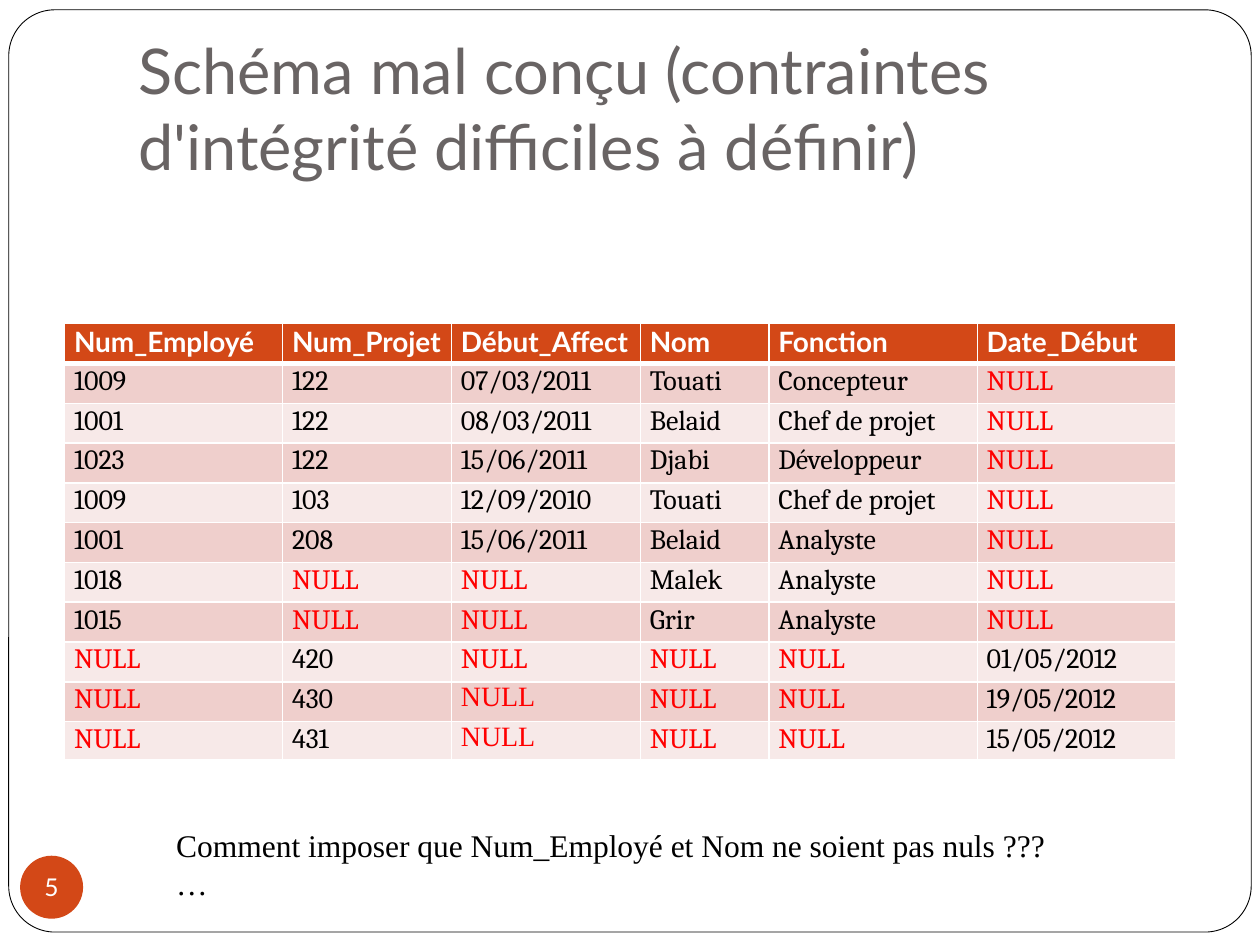
from dataclasses import dataclass

from lxml import etree
from pptx import Presentation
from pptx.dml.color import RGBColor
from pptx.enum.shapes import MSO_SHAPE
from pptx.enum.text import MSO_ANCHOR, PP_ALIGN
from pptx.oxml.ns import qn
from pptx.util import Pt

ROUNDED = MSO_SHAPE.ROUNDED_RECTANGLE
OVAL = MSO_SHAPE.OVAL
TOP, MIDDLE, BOTTOM = MSO_ANCHOR.TOP, MSO_ANCHOR.MIDDLE, MSO_ANCHOR.BOTTOM
LEFT, CENTER = PP_ALIGN.LEFT, PP_ALIGN.CENTER


@dataclass(frozen=True)
class Theme:
    white: str = "FFFFFF"
    black: str = "000000"
    title: str = "696464"
    accent: str = "D34817"
    missing: str = "FF0000"
    bands: tuple = ("EFCFCC", "F7E9E8")
    heading_font: str = "Lato"
    cell_font: str = "Cambria"
    note_font: str = "Times New Roman"
    title_size: int = 36
    note_size: int = 18
    cell_size: int = 16
    number_size: int = 14


class SlideBuilder:
    def __init__(self, slide, theme):
        self.slide = slide
        self.theme = theme

    def set_text(self, frame, lines, font, size, color, align=LEFT, bold=False, spacing=None):
        frame.text = "\n".join(lines)
        for paragraph in frame.paragraphs:
            paragraph.alignment = align
            paragraph.line_spacing = spacing
            paragraph.font.name = font
            paragraph.font.size = Pt(size)
            paragraph.font.bold = bold
            paragraph.font.color.rgb = RGBColor.from_string(color)

    def shape(self, kind, box, fill, line=None):
        shape = self.slide.shapes.add_shape(kind, *map(Pt, box))
        shape.shadow.inherit = False
        shape.fill.solid()
        shape.fill.fore_color.rgb = RGBColor.from_string(fill)
        if line:
            shape.line.color.rgb = RGBColor.from_string(line)
            shape.line.width = Pt(0.5)
        else:
            shape.line.fill.background()
        return shape

    def frame(self, box):
        outline = self.shape(ROUNDED, box, self.theme.white, self.theme.black)
        outline.adjustments[0] = 0.05

    def text(self, box, lines, font, size, color, anchor=TOP, bottom=3.6):
        frame = self.slide.shapes.add_textbox(*map(Pt, box)).text_frame
        frame.word_wrap = True
        frame.vertical_anchor = anchor
        frame.margin_bottom = Pt(bottom)
        self.set_text(frame, lines, font, size, color)

    def page_number(self, box, number):
        theme = self.theme
        frame = self.shape(OVAL, box, theme.accent).text_frame
        frame.margin_left = frame.margin_right = frame.margin_top = frame.margin_bottom = 0
        frame.word_wrap = False
        frame.vertical_anchor = MIDDLE
        self.set_text(frame, [number], theme.heading_font, theme.number_size, theme.white, CENTER)

    def borders(self, cell, top, bottom):
        properties = cell._tc.get_or_add_tcPr()
        for side, width in (("L", 1), ("R", 1), ("T", top), ("B", bottom)):
            line = etree.SubElement(properties, qn(f"a:ln{side}"), w=str(Pt(width)))
            fill = etree.SubElement(line, qn("a:solidFill"))
            etree.SubElement(fill, qn("a:srgbClr"), val=self.theme.white)

    def cell(self, cell, value, row, plain):
        theme = self.theme
        header = row == 0
        cell.margin_left = cell.margin_right = Pt(5.4)
        cell.margin_top = cell.margin_bottom = 0
        self.borders(cell, 3 if row == 1 else 1, 3 if header else 1)
        cell.fill.solid()
        fill = theme.accent if header else theme.bands[(row - 1) % 2]
        cell.fill.fore_color.rgb = RGBColor.from_string(fill)
        if header:
            font, color = theme.heading_font, theme.white
        else:
            font = theme.note_font if plain else theme.cell_font
            color = theme.missing if value == "NULL" else theme.black
        self.set_text(cell.text_frame, [value], font, theme.cell_size, color,
                      bold=header, spacing=1.0 if plain else 1.05)

    def table(self, left, top, widths, heights, records, plain_cells):
        table = self.slide.shapes.add_table(
            len(heights), len(widths), Pt(left), Pt(top), Pt(sum(widths)), Pt(sum(heights))
        ).table
        for column, width in zip(table.columns, widths):
            column.width = Pt(width)
        for row, height in zip(table.rows, heights):
            row.height = Pt(height)
        for row, record in enumerate(records):
            for column, value in enumerate(record):
                self.cell(table.cell(row, column), value, row, (row, column) in plain_cells)


ASSIGNMENTS = [
    ("Num_Employé", "Num_Projet", "Début_Affect", "Nom", "Fonction", "Date_Début"),
    ("1009", "122", "07/03/2011", "Touati", "Concepteur", "NULL"),
    ("1001", "122", "08/03/2011", "Belaid", "Chef de projet", "NULL"),
    ("1023", "122", "15/06/2011", "Djabi", "Développeur", "NULL"),
    ("1009", "103", "12/09/2010", "Touati", "Chef de projet", "NULL"),
    ("1001", "208", "15/06/2011", "Belaid", "Analyste", "NULL"),
    ("1018", "NULL", "NULL", "Malek", "Analyste", "NULL"),
    ("1015", "NULL", "NULL", "Grir", "Analyste", "NULL"),
    ("NULL", "420", "NULL", "NULL", "NULL", "01/05/2012"),
    ("NULL", "430", "NULL", "NULL", "NULL", "19/05/2012"),
    ("NULL", "431", "NULL", "NULL", "NULL", "15/05/2012"),
]


def main():
    deck = Presentation()
    deck.slide_width, deck.slide_height = Pt(720), Pt(540)
    theme = Theme()
    page = SlideBuilder(deck.slides.add_slide(deck.slide_layouts[6]), theme)

    page.frame((5, 5.6, 710, 527))
    page.text((72, 21.6, 612, 90),
              ["Schéma mal conçu (contraintes d'intégrité difficiles à définir)"],
              theme.heading_font, theme.title_size, theme.title, BOTTOM, 7.2)
    page.page_number((11.5, 489, 36, 36), "5")
    page.text((93.6, 468.7, 550, 51),
              ["Comment imposer que Num_Employé et Nom ne soient pas nuls ???", "…"],
              theme.note_font, theme.note_size, theme.black)
    page.table(36.9, 185, (124.6, 96.5, 108, 73.5, 119, 113.2),
               [22.75] * 10 + [21.6], ASSIGNMENTS, {(9, 2), (10, 2)})

    deck.save("out.pptx")


if __name__ == "__main__":
    main()
